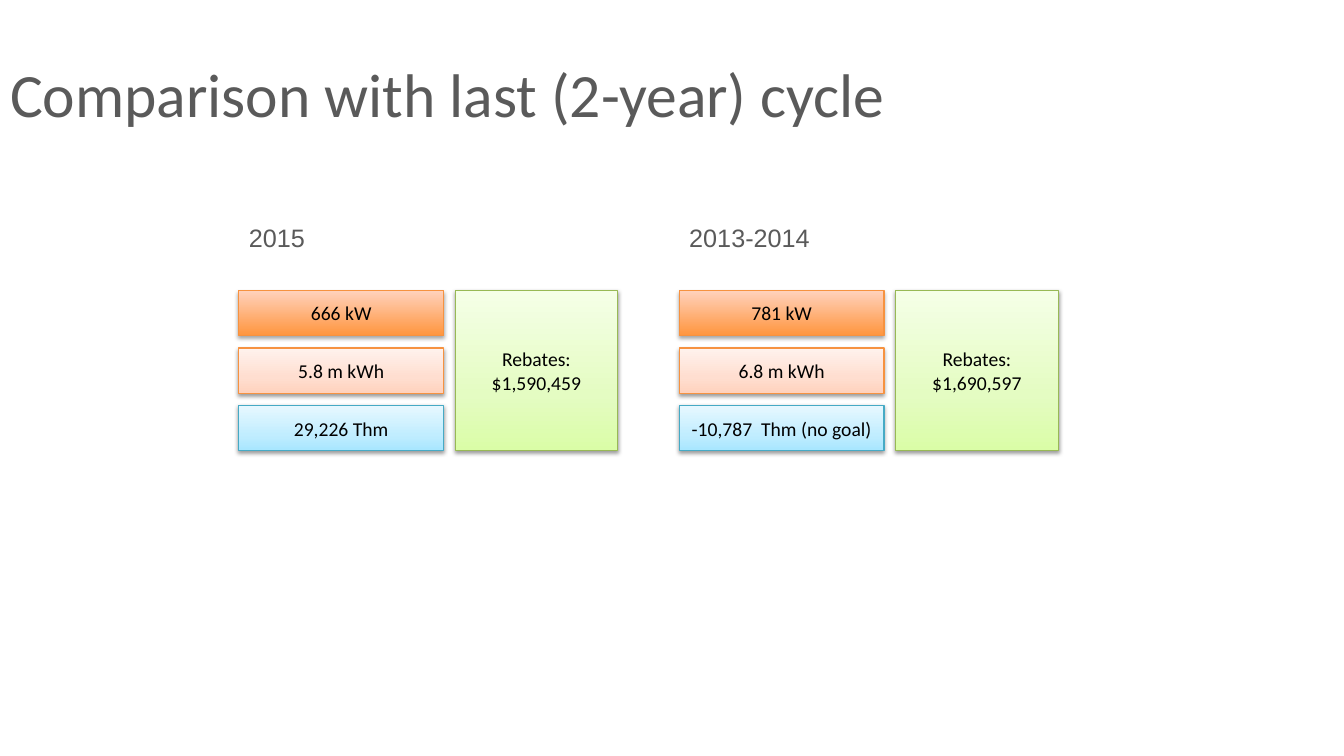
"""Build a slide comparing 2015 savings with the previous two-year cycle."""
from copy import deepcopy

from lxml import etree
from pptx import Presentation
from pptx.dml.color import RGBColor
from pptx.enum.shapes import MSO_SHAPE
from pptx.enum.text import MSO_ANCHOR, MSO_AUTO_SIZE, PP_ALIGN
from pptx.oxml.ns import qn
from pptx.util import Cm, Pt

RECTANGLE = MSO_SHAPE.RECTANGLE
MIDDLE, TOP = MSO_ANCHOR.MIDDLE, MSO_ANCHOR.TOP
LEFT, CENTER = PP_ALIGN.LEFT, PP_ALIGN.CENTER
FIXED_SIZE = MSO_AUTO_SIZE.NONE

GREY = RGBColor(0x5A, 0x5A, 0x5A)
BLACK = RGBColor(0x00, 0x00, 0x00)
ORANGE_LINE = RGBColor(0xF6, 0x92, 0x40)
BLUE_LINE = RGBColor(0x46, 0xAA, 0xC5)
GREEN_LINE = RGBColor(0x98, 0xB9, 0x55)
ORANGE = (RGBColor(0xFF, 0x95, 0x3E), RGBColor(0xFF, 0xD2, 0xBD))
PEACH = (RGBColor(0xFF, 0xD2, 0xBD), RGBColor(0xFF, 0xDE, 0xD0), RGBColor(0xFF, 0xF2, 0xED))
BLUE = (RGBColor(0xA7, 0xE6, 0xFF), RGBColor(0xC1, 0xED, 0xFF), RGBColor(0xE7, 0xF8, 0xFF))
GREEN = (RGBColor(0xDA, 0xFD, 0xA7), RGBColor(0xE4, 0xFC, 0xC2), RGBColor(0xF5, 0xFF, 0xE7))

BAR_STYLES = ((ORANGE, ORANGE_LINE), (PEACH, ORANGE_LINE), (BLUE, BLUE_LINE))
BAR_WIDTH, BAR_HEIGHT, BAR_PITCH = Cm(5.16), Cm(1.14), Cm(1.45)
REBATE_OFFSET, REBATE_WIDTH = Cm(5.45), Cm(4.1)
HEADING_HEIGHT, BARS_OFFSET = Cm(1.02), Cm(1.83)
PANEL_TOP, PANEL_WIDTH = Cm(5.49), Cm(9.55)
PANELS = (
    (Cm(6.02), "2015", ("666 kW", "5.8 m kWh", "29,226 Thm"), "$1,590,459"),
    (Cm(17.12), "2013-2014", ("781 kW", "6.8 m kWh", "-10,787  Thm (no goal)"), "$1,690,597"),
)


def write_text(frame, text, size=14, font="Calibri", color=BLACK, align=CENTER, anchor=MIDDLE):
    """Fill a text frame with one formatted paragraph per line of text."""
    frame.word_wrap = True
    frame.auto_size = FIXED_SIZE
    frame.vertical_anchor = anchor
    frame.text = text
    for para in frame.paragraphs:
        para.alignment = align
        para.font.size = Pt(size)
        para.font.name = font
        para.font.color.rgb = color


def set_gradient(shape, colors):
    """Fill a shape with a gradient rising from the first color to the last."""
    shape.fill.gradient()
    shape.fill.gradient_angle = 90
    if len(colors) == 3:
        first = shape._element.spPr.find(".//" + qn("a:gs"))
        middle = deepcopy(first)
        middle.set("pos", "35000")
        first.addnext(middle)
    for stop, color in zip(shape.fill.gradient_stops, colors):
        stop.color.rgb = color


def set_shadow(shape, distance, opacity):
    """Give a shape a soft black shadow straight below it."""
    shape.shadow.inherit = False
    effects = shape._element.spPr.find(qn("a:effectLst"))
    shadow = etree.SubElement(effects, qn("a:outerShdw"), blurRad=str(Pt(3.1)),
                              dist=str(Pt(distance)), dir="5400000", rotWithShape="0")
    color = etree.SubElement(shadow, qn("a:srgbClr"), val=str(BLACK))
    etree.SubElement(color, qn("a:alpha"), val=str(opacity * 1000))


def add_tile(page, text, box, colors, line_color):
    """Draw a labelled gradient rectangle in the given box."""
    tile = page.shapes.add_shape(RECTANGLE, *box)
    set_gradient(tile, colors)
    tile.line.color.rgb = line_color
    tile.line.width = Pt(0.75)
    if colors == ORANGE:
        set_shadow(tile, distance=1.8, opacity=35)
    else:
        set_shadow(tile, distance=1.6, opacity=38)
    write_text(tile.text_frame, text)


def add_title(page, text, box):
    """Place and format the slide title in the given box."""
    title = page.shapes.title
    title.left, title.top, title.width, title.height = box
    write_text(title.text_frame, text, size=44, color=GREY, align=LEFT)


def add_cycle_panel(page, heading, savings, rebates, box):
    """Place a cycle heading, its savings bars and its rebate tile in the given box."""
    left, top, width, height = box
    label = page.shapes.add_textbox(left, top, width, HEADING_HEIGHT)
    write_text(label.text_frame, heading, size=18, font="Arial", color=GREY, align=LEFT, anchor=TOP)
    bars_top = top + BARS_OFFSET
    rebate_box = (left + REBATE_OFFSET, bars_top, REBATE_WIDTH, height - BARS_OFFSET)
    add_tile(page, f"Rebates:\n{rebates}", rebate_box, GREEN, GREEN_LINE)
    for row, (saving, (colors, line_color)) in enumerate(zip(savings, BAR_STYLES)):
        bar_box = (left, bars_top + row * BAR_PITCH, BAR_WIDTH, BAR_HEIGHT)
        add_tile(page, saving, bar_box, colors, line_color)


def main():
    """Build the deck and save it."""
    deck = Presentation()
    deck.slide_width, deck.slide_height = Cm(33.87), Cm(19.05)
    page = deck.slides.add_slide(deck.slide_layouts[5])
    add_title(page, "Comparison with last (2-year) cycle",
              (Cm(0), Cm(0.76), deck.slide_width, Cm(3.18)))
    panel_height = BARS_OFFSET + 2 * BAR_PITCH + BAR_HEIGHT
    for left, heading, savings, rebates in PANELS:
        box = (left, PANEL_TOP, PANEL_WIDTH, panel_height)
        add_cycle_panel(page, heading, savings, rebates, box)
    deck.save("out.pptx")


if __name__ == "__main__":
    main()
